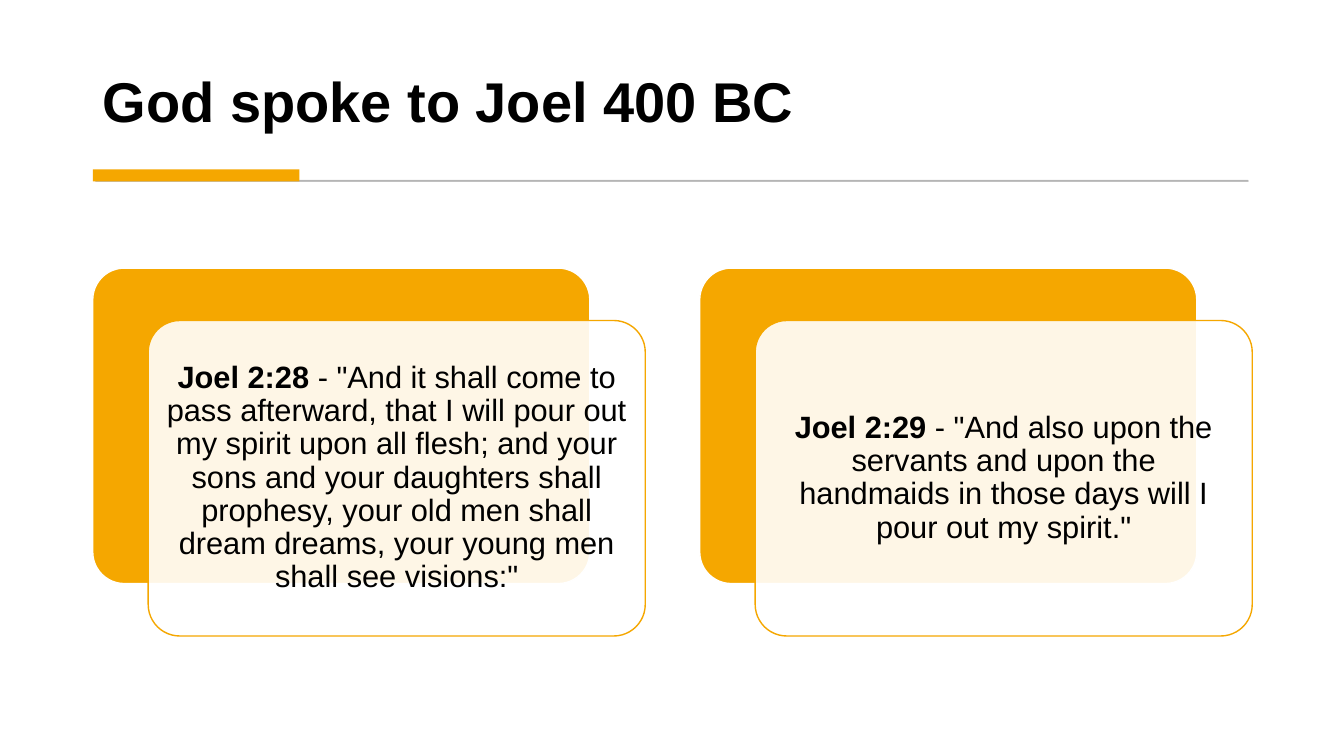
from dataclasses import dataclass

from lxml import etree
from pptx import Presentation
from pptx.dml.color import RGBColor
from pptx.enum.shapes import MSO_SHAPE
from pptx.enum.text import MSO_ANCHOR, MSO_AUTO_SIZE, PP_ALIGN
from pptx.oxml.ns import qn
from pptx.shapes.autoshape import Shape
from pptx.slide import Slide
from pptx.text.text import TextFrame
from pptx.util import Emu, Pt

RECT, ROUNDED = MSO_SHAPE.RECTANGLE, MSO_SHAPE.ROUNDED_RECTANGLE
MIDDLE, BOTTOM = MSO_ANCHOR.MIDDLE, MSO_ANCHOR.BOTTOM
LEFT, CENTER = PP_ALIGN.LEFT, PP_ALIGN.CENTER
NO_AUTOFIT = MSO_AUTO_SIZE.NONE

BLACK = RGBColor(0x00, 0x00, 0x00)
WHITE = RGBColor(0xFF, 0xFF, 0xFF)
GREY = RGBColor(0x59, 0x59, 0x59)
AMBER = RGBColor(0xF5, 0xA7, 0x00)
FONT = "Arial"

# Layout in px, 100 to the inch
EMU_PER_PX = 9144
MARGIN = 92
CARD_TOP, CARD_W, CARD_H = 266, 493, 313
CARD_PITCH = 602
FRONT_DX, FRONT_DY = 55, 52
CARD_INSET = 8  # added to the inset that the rounded corners give


@dataclass
class Verse:
    reference: str
    words: str


VERSES = [
    Verse(
        "Joel 2:28",
        ' - "And it shall come to pass afterward, that I will pour out my spirit '
        "upon all flesh; and your sons and your daughters shall prophesy, your old "
        'men shall dream dreams, your young men shall see visions:"',
    ),
    Verse(
        "Joel 2:29",
        ' - "And also upon the servants and upon the handmaids in those days '
        'will I pour out my spirit."',
    ),
]


def px(n: int) -> Emu:
    return Emu(n * EMU_PER_PX)


def set_alpha(sp: Shape, tag: str, percent: int) -> None:
    """Set the opacity of the shape's solid fill or line."""
    parent = sp.fill._xPr if tag == "fill" else sp.line._get_or_add_ln()
    color = parent.find(qn("a:solidFill"))[0]
    etree.SubElement(color, qn("a:alpha")).set("val", str(percent * 1000))


def add_box(s: Slide, kind: MSO_SHAPE, x: int, y: int, w: int, h: int,
            fill: RGBColor, line: RGBColor | None = None, line_pt: float = 1) -> Shape:
    sp = s.shapes.add_shape(kind, px(x), px(y), px(w), px(h))
    sp.shadow.inherit = False
    sp.fill.solid()
    sp.fill.fore_color.rgb = fill
    if line is None:
        sp.line.fill.background()
    else:
        sp.line.color.rgb = line
        sp.line.width = Pt(line_pt)
    if kind == ROUNDED:
        sp.adjustments[0] = 0.1
    return sp


def write(tf: TextFrame, runs: list[tuple[str, bool]], size: int,
          align: PP_ALIGN, anchor: MSO_ANCHOR) -> None:
    tf.word_wrap = True
    tf.auto_size = NO_AUTOFIT
    tf.vertical_anchor = anchor
    p = tf.paragraphs[0]
    p.alignment = align
    p.line_spacing = 0.9
    for text, bold in runs:
        r = p.add_run()
        r.text = text
        r.font.name = FONT
        r.font.size = Pt(size)
        r.font.bold = bold
        r.font.color.rgb = BLACK


def add_card(s: Slide, x: int, verse: Verse) -> None:
    add_box(s, ROUNDED, x, CARD_TOP, CARD_W, CARD_H, AMBER, WHITE)
    front = add_box(s, ROUNDED, x + FRONT_DX, CARD_TOP + FRONT_DY,
                    CARD_W, CARD_H, WHITE, AMBER)
    set_alpha(front, "fill", 90)
    tf = front.text_frame
    tf.margin_left = tf.margin_right = px(CARD_INSET)
    tf.margin_top = tf.margin_bottom = px(CARD_INSET)
    write(tf, [(verse.reference, True), (verse.words, False)], 22, CENTER, MIDDLE)
    tf.paragraphs[0].space_after = Pt(7.7)


def main() -> None:
    prs = Presentation()
    prs.slide_width, prs.slide_height = px(1333), px(750)
    s = prs.slides.add_slide(prs.slide_layouts[5])
    s.background.fill.solid()
    s.background.fill.fore_color.rgb = WHITE

    # Title
    title = s.shapes.title
    title.left, title.top = px(MARGIN), px(28)
    title.width, title.height = px(1149), px(111)
    write(title.text_frame, [("God spoke to Joel 400 BC", True)], 40, LEFT, BOTTOM)

    # Rule with its accent bar
    rule = add_box(s, RECT, 95, 179, 1143, 1, GREY, GREY, 0.75)
    set_alpha(rule, "fill", 30)
    set_alpha(rule, "line", 30)
    add_box(s, RECT, MARGIN, 168, 205, 12, AMBER)

    # Verse cards
    for i, verse in enumerate(VERSES):
        add_card(s, MARGIN + i * CARD_PITCH, verse)

    prs.save("out.pptx")


if __name__ == "__main__":
    main()
